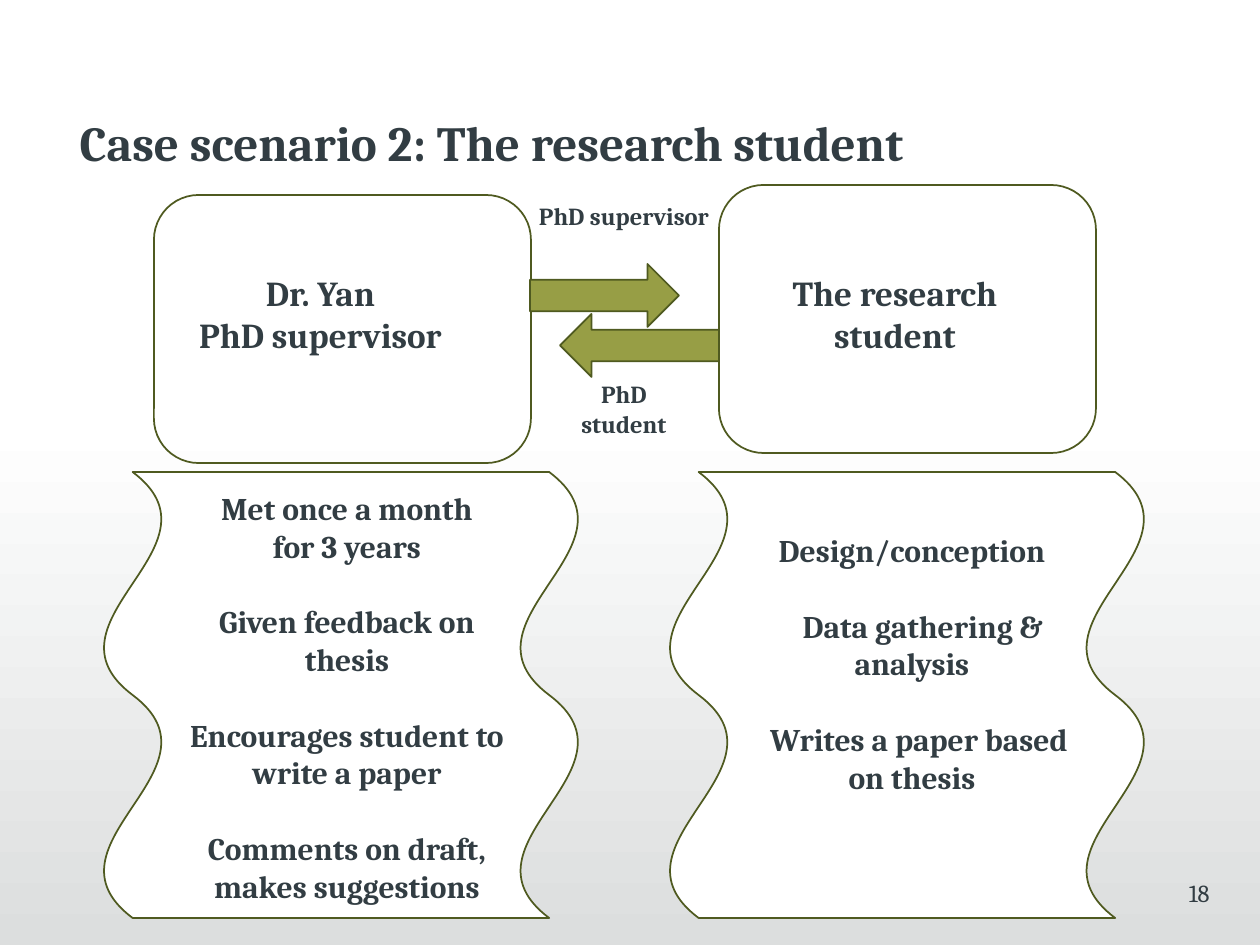
from dataclasses import dataclass
from typing import Optional

from pptx import Presentation
from pptx.dml.color import RGBColor
from pptx.enum.shapes import MSO_SHAPE as Preset
from pptx.enum.text import MSO_ANCHOR as Anchor, PP_ALIGN as Align
from pptx.util import Emu, Pt

INK = RGBColor(0x32, 0x3D, 0x43)
OLIVE = RGBColor(0x97, 0x9E, 0x45)
OUTLINE = RGBColor(0x4F, 0x5A, 0x20)
WHITE = RGBColor(0xFF, 0xFF, 0xFF)
MIST = RGBColor(0xDC, 0xDE, 0xDE)
FONT = "Cambria"
PX_PER_INCH = 126


def px(length: int) -> Emu:
    return Emu(round(length * 914400 / PX_PER_INCH))


@dataclass(frozen=True)
class Box:
    left: int
    top: int
    width: int
    height: int

    def emu(self) -> tuple:
        return tuple(px(n) for n in (self.left, self.top, self.width, self.height))


@dataclass(frozen=True)
class Figure:
    preset: Preset
    box: Box
    fill: Optional[RGBColor] = None
    rotation: int = 0


@dataclass(frozen=True)
class Label:
    box: Box
    lines: tuple
    size: int


@dataclass(frozen=True)
class Duty:
    lines: tuple
    indent: int = 0


@dataclass(frozen=True)
class DutyList:
    box: Box
    duties: tuple


def draw_figure(slide, figure: Figure) -> None:
    shape = slide.shapes.add_shape(figure.preset, *figure.box.emu())
    shape.shadow.inherit = False
    shape.rotation = figure.rotation
    if figure.fill is None:
        shape.fill.background()
    else:
        shape.fill.solid()
        shape.fill.fore_color.rgb = figure.fill
    shape.line.color.rgb = OUTLINE
    shape.line.width = Pt(1)


def draw_band(slide, box: Box) -> None:
    band = slide.shapes.add_shape(Preset.RECTANGLE, *box.emu())
    band.shadow.inherit = False
    band.line.fill.background()
    band.fill.gradient()
    band.fill.gradient_angle = 270
    for stop, color in zip(band.fill.gradient_stops, (WHITE, MIST)):
        stop.color.rgb = color


def write_line(paragraph, text: str, *, size: int, bold: bool = True,
               align=Align.CENTER, before: float = 0, indent: int = 0) -> None:
    if indent:
        paragraph._p.get_or_add_pPr().set("marL", str(px(indent)))
    paragraph.alignment = align
    paragraph.space_before = Pt(before)
    run = paragraph.add_run()
    run.text = text
    run.font.name = FONT
    run.font.size = Pt(size)
    run.font.bold = bold
    run.font.color.rgb = INK


def add_frame(slide, box: Box):
    frame = slide.shapes.add_textbox(*box.emu()).text_frame
    frame.word_wrap = True
    return frame


def draw_label(slide, label: Label, **style) -> None:
    frame = add_frame(slide, label.box)
    for index, text in enumerate(label.lines):
        paragraph = frame.add_paragraph() if index else frame.paragraphs[0]
        write_line(paragraph, text, size=label.size, **style)


def draw_duties(slide, duty_list: DutyList) -> None:
    frame = add_frame(slide, duty_list.box)
    for number, duty in enumerate(duty_list.duties):
        for index, text in enumerate(duty.lines):
            first = number == index == 0
            paragraph = frame.paragraphs[0] if first else frame.add_paragraph()
            write_line(paragraph, text, size=18,
                       before=21.5 if number and not index else 0,
                       indent=0 if index else duty.indent)


def draw_title(slide, text: str, box: Box) -> None:
    title = slide.shapes.title
    title.left, title.top, title.width, title.height = box.emu()
    title.text_frame.vertical_anchor = Anchor.TOP
    title.text_frame.word_wrap = True
    write_line(title.text_frame.paragraphs[0], text, size=28, align=Align.LEFT)


FIGURES = (
    Figure(Preset.DOUBLE_WAVE, Box(118, 457, 446, 476), WHITE, 270),
    Figure(Preset.DOUBLE_WAVE, Box(684, 457, 446, 476), WHITE, 270),
    Figure(Preset.ROUNDED_RECTANGLE, Box(154, 195, 377, 268)),
    Figure(Preset.ROUNDED_RECTANGLE, Box(719, 185, 377, 268)),
    Figure(Preset.RIGHT_ARROW, Box(530, 264, 149, 63), OLIVE),
    Figure(Preset.LEFT_ARROW, Box(560, 314, 159, 63), OLIVE),
)

LABELS = (
    Label(Box(166, 265, 309, 97), ("Dr. Yan", "PhD supervisor"), 20),
    Label(Box(764, 265, 262, 97), ("The research", "student"), 20),
    Label(Box(520, 195, 208, 72), ("PhD supervisor",), 14),
    Label(Box(561, 373, 126, 72), ("PhD", "student"), 14),
)

DUTY_LISTS = (
    DutyList(Box(32, 483, 630, 432), (
        Duty(("Met once a month", "for 3 years")),
        Duty(("Given feedback on", "thesis")),
        Duty(("Encourages student to", "write a paper")),
        Duty(("Comments on draft,", "makes suggestions")),
    )),
    DutyList(Box(659, 525, 506, 382), (
        Duty(("Design/conception",)),
        Duty(("Data gathering &", "analysis"), indent=22),
        Duty(("Writes a paper based", "on thesis"), indent=14),
    )),
)


def main() -> None:
    deck = Presentation()
    deck.slide_width, deck.slide_height = px(1260), px(945)
    slide = deck.slides.add_slide(deck.slide_layouts[5])
    draw_title(slide, "Case scenario 2: The research student", Box(67, 106, 987, 72))
    draw_band(slide, Box(0, 420, 1260, 525))
    for figure in FIGURES:
        draw_figure(slide, figure)
    for label in LABELS:
        draw_label(slide, label)
    for duty_list in DUTY_LISTS:
        draw_duties(slide, duty_list)
    draw_label(slide, Label(Box(948, 872, 274, 63), ("18",), 14),
               bold=False, align=Align.RIGHT)
    deck.save("out.pptx")


if __name__ == "__main__":
    main()
